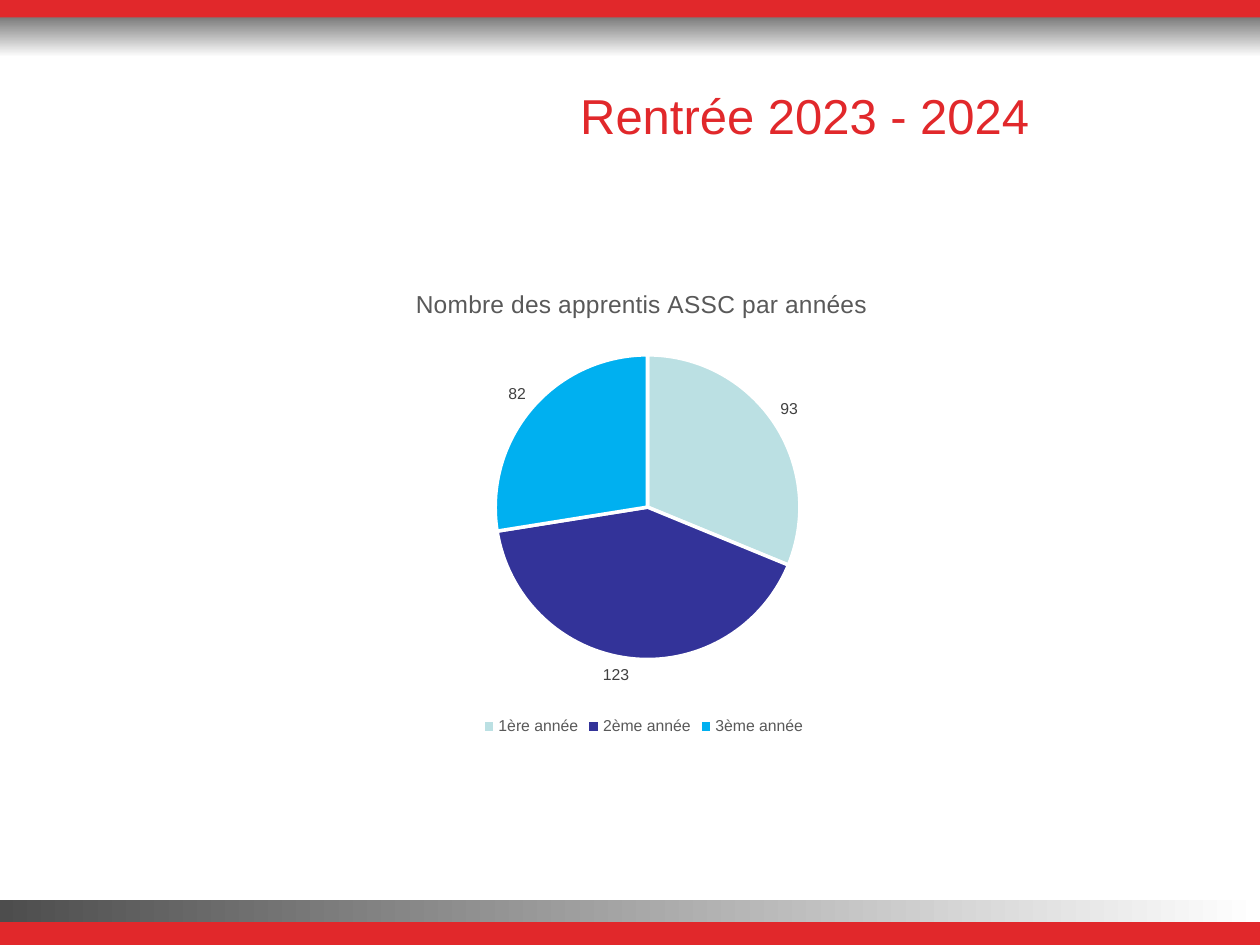
import pptx
import pptx.util
import pptx.oxml
import pptx.chart.data
import pptx.dml.color
import pptx.enum.chart
import pptx.enum.shapes
import pptx.enum.text

Cm = pptx.util.Cm
Pt = pptx.util.Pt
RGBColor = pptx.dml.color.RGBColor

RED = RGBColor(0xE1, 0x28, 0x2B)
WHITE = RGBColor(0xFF, 0xFF, 0xFF)
BLACK = RGBColor(0x00, 0x00, 0x00)
MID_GREY = RGBColor(0x5F, 0x5F, 0x5F)
DARK_GREY = RGBColor(0x4D, 0x4D, 0x4D)
TEXT_GREY = RGBColor(0x59, 0x59, 0x59)
LABEL_GREY = RGBColor(0x40, 0x40, 0x40)
SLICES = [RGBColor(0xBB, 0xE0, 0xE3), RGBColor(0x33, 0x33, 0x99), RGBColor(0x00, 0xB0, 0xF0)]
NS = "http://schemas.openxmlformats.org/drawingml/2006/chart"


def style(font, size, color):
    font.name = "Arial"
    font.size = Pt(size)
    font.bold = False
    font.color.rgb = color


def set_layout(element, index, **values):
    for old in element.findall(f"{{{NS}}}layout"):
        element.remove(old)
    items = "".join(f'<c:{tag} val="{val}"/>' for tag, val in values.items())
    xml = f'<c:layout xmlns:c="{NS}"><c:manualLayout>{items}</c:manualLayout></c:layout>'
    element.insert(index, pptx.oxml.parse_xml(xml))


prs = pptx.Presentation()
prs.slide_width = Cm(25.4)
prs.slide_height = Cm(19.05)
s = prs.slides.add_slide(prs.slide_layouts[5])

bars = [
    (0, 0.18, 25.43, 0.97, MID_GREY, 270),
    (0, 0, 25.43, 0.35, RED, None),
    (-0.03, 18.15, 25.43, 0.9, DARK_GREY, 0),
    (0, 18.59, 25.4, 0.47, RED, None),
]
for left, top, width, height, color, angle in bars:
    sp = s.shapes.add_shape(
        pptx.enum.shapes.MSO_SHAPE.RECTANGLE, Cm(left), Cm(top), Cm(width), Cm(height))
    sp.shadow.inherit = False
    sp.line.fill.background()
    if angle is None:
        sp.fill.solid()
        sp.fill.fore_color.rgb = color
    else:
        sp.fill.gradient()
        sp.fill.gradient_angle = angle
        for stop, rgb, position in zip(sp.fill.gradient_stops, (color, WHITE), (0, 1)):
            stop.color.rgb = rgb
            stop.position = position

title = s.shapes.title
title.left, title.top, title.width, title.height = Cm(7.72), Cm(1.6), Cm(17), Cm(1.45)
tf = title.text_frame
tf.text = "Rentrée 2023 - 2024"
tf.vertical_anchor = pptx.enum.text.MSO_ANCHOR.MIDDLE
p = tf.paragraphs[0]
p.alignment = pptx.enum.text.PP_ALIGN.CENTER
style(p.runs[0].font, 28, RED)

data = pptx.chart.data.CategoryChartData()
data.categories = ["1ère année", "2ème année", "3ème année"]
data.add_series("Series 1", [93, 123, 82])
chart = s.shapes.add_chart(
    pptx.enum.chart.XL_CHART_TYPE.PIE, Cm(4.9), Cm(5.33), Cm(16.15), Cm(9.6), data).chart
style(chart.font, 10, BLACK)

chart.has_title = True
tf = chart.chart_title.text_frame
tf.text = "Nombre des apprentis ASSC par années"
style(tf.paragraphs[0].runs[0].font, 14, TEXT_GREY)
chart.chart_title.include_in_layout = False
set_layout(chart.chart_title._element, 1, xMode="edge", yMode="edge", x=0.21, y=0.04)

chart.has_legend = True
chart.legend.position = pptx.enum.chart.XL_LEGEND_POSITION.BOTTOM
chart.legend.include_in_layout = False
style(chart.legend.font, 9, TEXT_GREY)

plot = chart.plots[0]
plot.vary_by_categories = True
set_layout(chart._chartSpace.chart.plotArea, 0, layoutTarget="inner",
           xMode="edge", yMode="edge", x=0.09, y=0.19, w=0.83, h=0.64)
for i, color in enumerate(SLICES):
    point = plot.series[0].points[i]
    point.format.fill.solid()
    point.format.fill.fore_color.rgb = color
    point.format.line.color.rgb = WHITE
    point.format.line.width = Pt(2)

labels = plot.series[0].data_labels
labels.show_value = True
labels.position = pptx.enum.chart.XL_LABEL_POSITION.OUTSIDE_END
style(labels.font, 9, LABEL_GREY)

prs.save("out.pptx")
